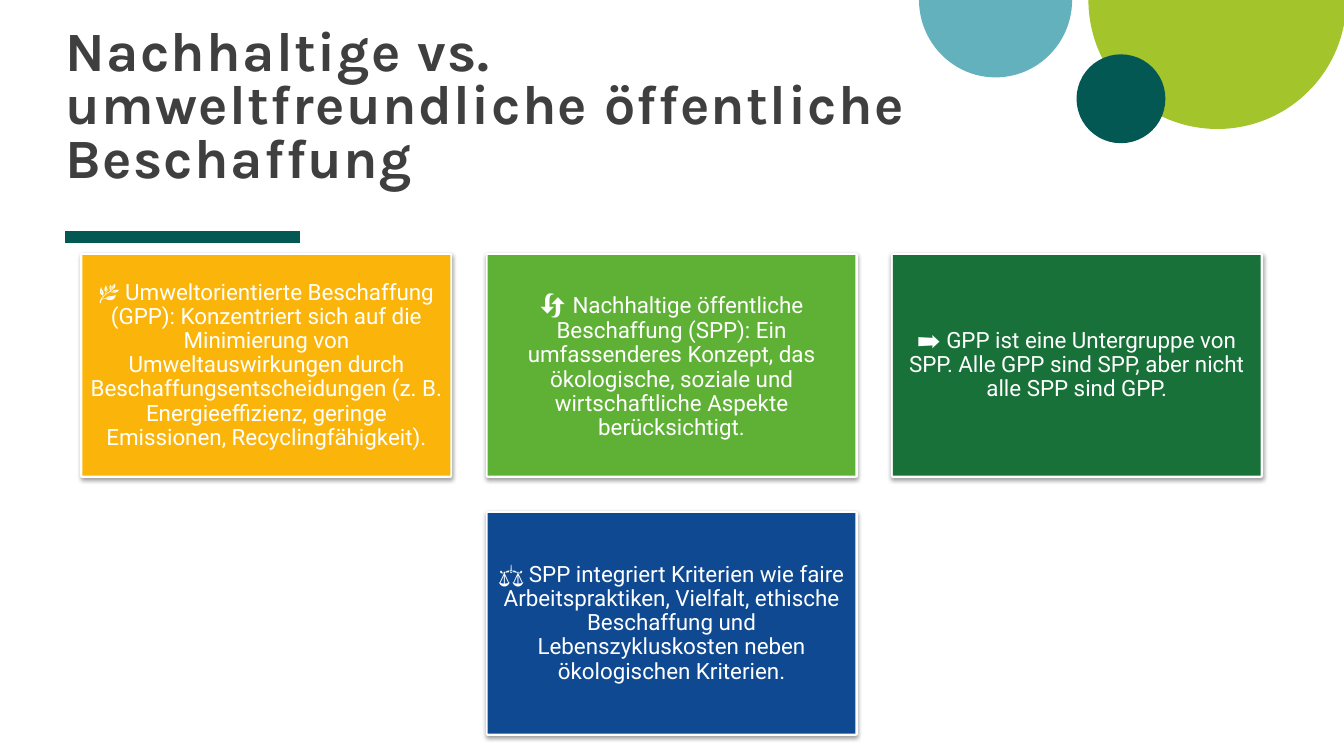
from dataclasses import dataclass

from lxml.etree import SubElement
from pptx import Presentation
from pptx.dml.color import RGBColor
from pptx.enum.shapes import MSO_CONNECTOR, MSO_SHAPE
from pptx.enum.text import MSO_ANCHOR, PP_ALIGN
from pptx.oxml.ns import qn
from pptx.util import Cm, Pt

TITLE = "Nachhaltige vs. umweltfreundliche öffentliche Beschaffung"

# frame colour, panel colour, symbol, symbol size, statement
CARDS = [
    ("FAB506", "FBB50A", "🌿 ", 16,
     "Umweltorientierte Beschaffung (GPP): Konzentriert sich auf die Minimierung von "
     "Umweltauswirkungen durch Beschaffungsentscheidungen (z. B. Energieeffizienz, "
     "geringe Emissionen, Recyclingfähigkeit)."),
    ("77DA1C", "5FB135", "🔄 ", 19,
     "Nachhaltige öffentliche Beschaffung (SPP): Ein umfassenderes Konzept, das "
     "ökologische, soziale und wirtschaftliche Aspekte berücksichtigt."),
    ("30BC5E", "187138", "➡️ ", 16,
     "GPP ist eine Untergruppe von SPP. Alle GPP sind SPP, aber nicht alle SPP sind GPP."),
    ("4393A0", "0F4991", "⚖️ ", 16,
     "SPP integriert Kriterien wie faire Arbeitspraktiken, Vielfalt, ethische Beschaffung "
     "und Lebenszykluskosten neben ökologischen Kriterien."),
]

# preset, left, top, width, height (cm), colour
BUBBLES = [
    (MSO_SHAPE.PIE, 27.43, -3.25, 6.5, 6.5, "A3C42A"),
    (MSO_SHAPE.PIE, 23.16, -1.96, 3.86, 3.91, "64B1BE"),
    (MSO_SHAPE.OVAL, 27.13, 1.37, 2.24, 2.24, "035854"),
]
HALF_TURN = 108  # 180 degrees in the units of a pie adjustment

COLUMNS = 3
GRID_LEFT, GRID_TOP = 2.08, 6.43
CARD_WIDTH, CARD_HEIGHT = 9.27, 5.56
COLUMN_STEP, ROW_STEP = 10.21, 6.5


@dataclass(frozen=True)
class Theme:
    heading_font: str = "Karla"
    body_font: str = "Roboto"
    heading_size: float = 39.6
    body_size: float = 16
    heading: str = "3F3F3F"
    accent: str = "035854"
    white: str = "FFFFFF"
    shadow: str = "000000"


THEME = Theme()


def write(shape, runs, *, font, color, align, spacing, inset=0.0, bold=False, tracking=0):
    """Fill a shape with one paragraph of (text, size) runs."""
    frame = shape.text_frame
    frame.word_wrap = True
    frame.vertical_anchor = MSO_ANCHOR.MIDDLE
    frame.margin_left = frame.margin_right = Cm(inset)
    frame.margin_top = frame.margin_bottom = Cm(inset)
    paragraph = frame.paragraphs[0]
    paragraph.alignment = align
    paragraph.line_spacing = spacing
    for text, size in runs:
        run = paragraph.add_run()
        run.text = text
        run.font.name = font
        run.font.size = Pt(size)
        run.font.bold = bold
        run.font.color.rgb = RGBColor.from_string(color)
        if tracking:
            run.font._element.set("spc", str(tracking))


def add_filled(slide, preset, left, top, width, height, color):
    shape = slide.shapes.add_shape(preset, Cm(left), Cm(top), Cm(width), Cm(height))
    shape.shadow.inherit = False
    shape.fill.solid()
    shape.fill.fore_color.rgb = RGBColor.from_string(color)
    shape.line.fill.background()
    return shape


def cast_shadow(shape):
    """Add a soft shadow that falls straight down."""
    effects = shape._element.spPr.find(qn("a:effectLst"))
    outer = SubElement(effects, qn("a:outerShdw"), blurRad=str(Pt(3.1)),
                       dist=str(Pt(1.6)), dir="5400000", algn="t", rotWithShape="0")
    tint = SubElement(outer, qn("a:srgbClr"), val=THEME.shadow)
    SubElement(tint, qn("a:alpha"), val="37000")


def add_header(slide):
    rule = slide.shapes.add_connector(
        MSO_CONNECTOR.STRAIGHT, Cm(1.65), Cm(5.97), Cm(7.57), Cm(5.97))
    rule.line.width = Pt(8)
    rule.line.color.rgb = RGBColor.from_string(THEME.accent)
    SubElement(rule._element.spPr, qn("a:effectLst"))

    for preset, *box, color in BUBBLES:
        bubble = add_filled(slide, preset, *box, color)
        if preset == MSO_SHAPE.PIE:
            bubble.adjustments[0] = 0
            bubble.adjustments[1] = HALF_TURN

    title = slide.shapes.add_textbox(Cm(1.65), Cm(0.56), Cm(23.57), Cm(4.37))
    write(title, [(TITLE, THEME.heading_size)], font=THEME.heading_font,
          color=THEME.heading, align=PP_ALIGN.LEFT, spacing=0.8, bold=True, tracking=100)


def add_cards(slide):
    """Set the cards in rows, with a short last row centred."""
    for index, (frame_color, panel_color, symbol, symbol_size, statement) in enumerate(CARDS):
        row, column = divmod(index, COLUMNS)
        in_row = min(COLUMNS, len(CARDS) - row * COLUMNS)
        left = GRID_LEFT + (column + (COLUMNS - in_row) / 2) * COLUMN_STEP
        box = (left, GRID_TOP + row * ROW_STEP, CARD_WIDTH, CARD_HEIGHT)

        frame = add_filled(slide, MSO_SHAPE.RECTANGLE, *box, frame_color)
        frame.line.width = Pt(3)
        frame.line.color.rgb = RGBColor.from_string(THEME.white)
        cast_shadow(frame)

        panel = add_filled(slide, MSO_SHAPE.RECTANGLE, *box, panel_color)
        write(panel, [(symbol, symbol_size), (statement, THEME.body_size)],
              font=THEME.body_font, color=THEME.white, align=PP_ALIGN.CENTER,
              spacing=0.9, inset=0.2)


def main():
    deck = Presentation()
    deck.slide_width, deck.slide_height = Cm(33.87), Cm(19.05)
    slide = deck.slides.add_slide(deck.slide_layouts[6])
    add_header(slide)
    add_cards(slide)
    deck.save("out.pptx")


if __name__ == "__main__":
    main()
